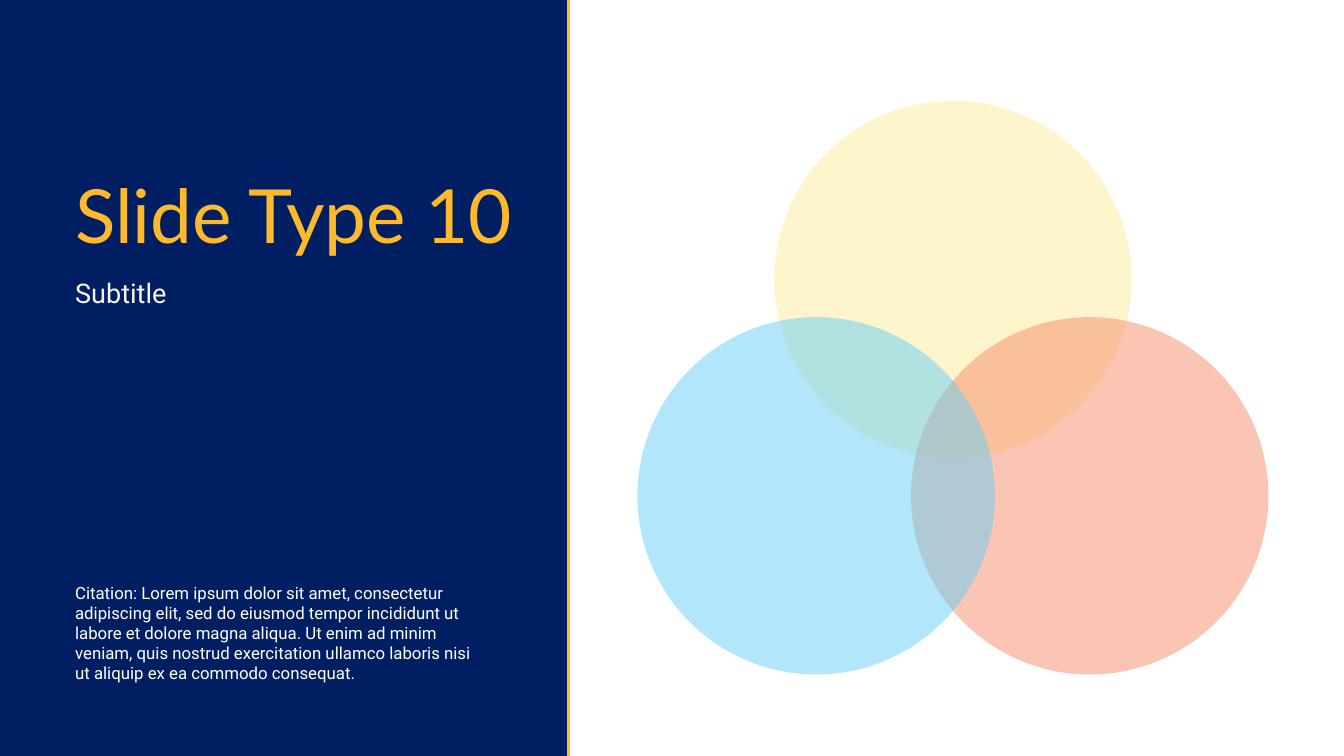
from dataclasses import dataclass

from lxml.etree import SubElement
from pptx import Presentation
from pptx.dml.color import RGBColor
from pptx.enum.shapes import MSO_CONNECTOR as Connector, MSO_SHAPE as Preset
from pptx.enum.text import MSO_ANCHOR as Anchor, MSO_AUTO_SIZE as AutoSize, PP_ALIGN as Align
from pptx.oxml.ns import qn
from pptx.util import Cm, Pt

WIDTH, HEIGHT = 50.8, 28.58
DIVIDER = 21.49
MARGIN = 2.84
DIAMETER = 13.51


def color(value):
    """Turn a hex string into a colour."""
    return RGBColor.from_string(value)


@dataclass
class VennSlide:
    """Hold the style and the current slide."""

    slide: object
    navy: str = "001F63"
    gold: str = "FFB92A"
    cream: str = "F8F4EB"
    white: str = "FFFFFF"
    heading: str = "Lato"
    body: str = "Roboto"

    def fill(self, preset, left, top, width, height, tint, opacity=100):
        """Add a borderless filled shape."""
        shape = self.slide.shapes.add_shape(preset, Cm(left), Cm(top), Cm(width), Cm(height))
        shape.shadow.inherit = False
        shape.line.fill.background()
        shape.fill.solid()
        shape.fill.fore_color.rgb = color(tint)
        if opacity < 100:
            paint = shape.element.spPr.find(f"{qn('a:solidFill')}/{qn('a:srgbClr')}")
            SubElement(paint, qn("a:alpha")).set("val", str(opacity * 1000))

    def circle(self, center, top, tint):
        """Add one translucent circle of the diagram."""
        self.fill(Preset.OVAL, center - DIAMETER / 2, top, DIAMETER, DIAMETER, tint, 50)

    def rule(self, x):
        """Add a full-height vertical line."""
        line = self.slide.shapes.add_connector(Connector.STRAIGHT, Cm(x), 0, Cm(x), Cm(HEIGHT))
        line.line.color.rgb = color(self.gold)
        line.line.width = Pt(2.25)
        SubElement(line.element.spPr, qn("a:effectLst"))

    def text(self, holder, top, width, height, words, font, size, spacing, tint):
        """Place a text holder in front and fill it with one run."""
        holder.left, holder.top = Cm(MARGIN), Cm(top)
        holder.width, holder.height = Cm(width), Cm(height)
        holder.element.getparent().append(holder.element)
        frame = holder.text_frame
        frame.word_wrap = True
        frame.auto_size = AutoSize.NONE
        frame.vertical_anchor = Anchor.TOP
        frame.margin_left = frame.margin_right = frame.margin_top = frame.margin_bottom = 0
        paragraph = frame.paragraphs[0]
        paragraph.alignment = Align.LEFT
        paragraph.line_spacing = Pt(spacing)
        paragraph.space_before = Pt(0)
        run = paragraph.add_run()
        run.text = words
        run.font.name, run.font.size = font, Pt(size)
        run.font.color.rgb = color(tint)


def main():
    """Build and save the slide."""
    deck = Presentation()
    deck.slide_width, deck.slide_height = Cm(WIDTH), Cm(HEIGHT)
    slide = deck.slides.add_slide(deck.slide_layouts[0])
    venn = VennSlide(slide)

    venn.fill(Preset.RECTANGLE, 0, 0, 21.54, HEIGHT, venn.navy)
    venn.rule(DIVIDER)

    middle, offset = 36.02, 5.17
    venn.circle(middle, 3.81, "FFED9A")
    venn.circle(middle + offset, 11.99, "F68D6A")
    venn.circle(middle - offset, 11.99, "66CEF6")

    citation = slide.shapes.add_textbox(0, 0, 0, 0)
    venn.text(citation, 22.02, 15.54, 3.71,
              "Citation: Lorem ipsum dolor sit amet, consectetur adipiscing elit, sed do "
              "eiusmod tempor incididunt ut labore et dolore magna aliqua. Ut enim ad minim "
              "veniam, quis nostrud exercitation ullamco laboris nisi ut aliquip ex ea "
              "commodo consequat.", venn.body, 18, 21.6, venn.white)
    venn.text(slide.shapes.title, 6.65, 17.07, 3.63,
              "Slide Type 10", venn.heading, 80, 88, venn.gold)
    venn.text(slide.placeholders[1], 10.46, 15.54, 1.19,
              "Subtitle", venn.body, 29, 34.8, venn.cream)

    deck.save("out.pptx")


if __name__ == "__main__":
    main()
